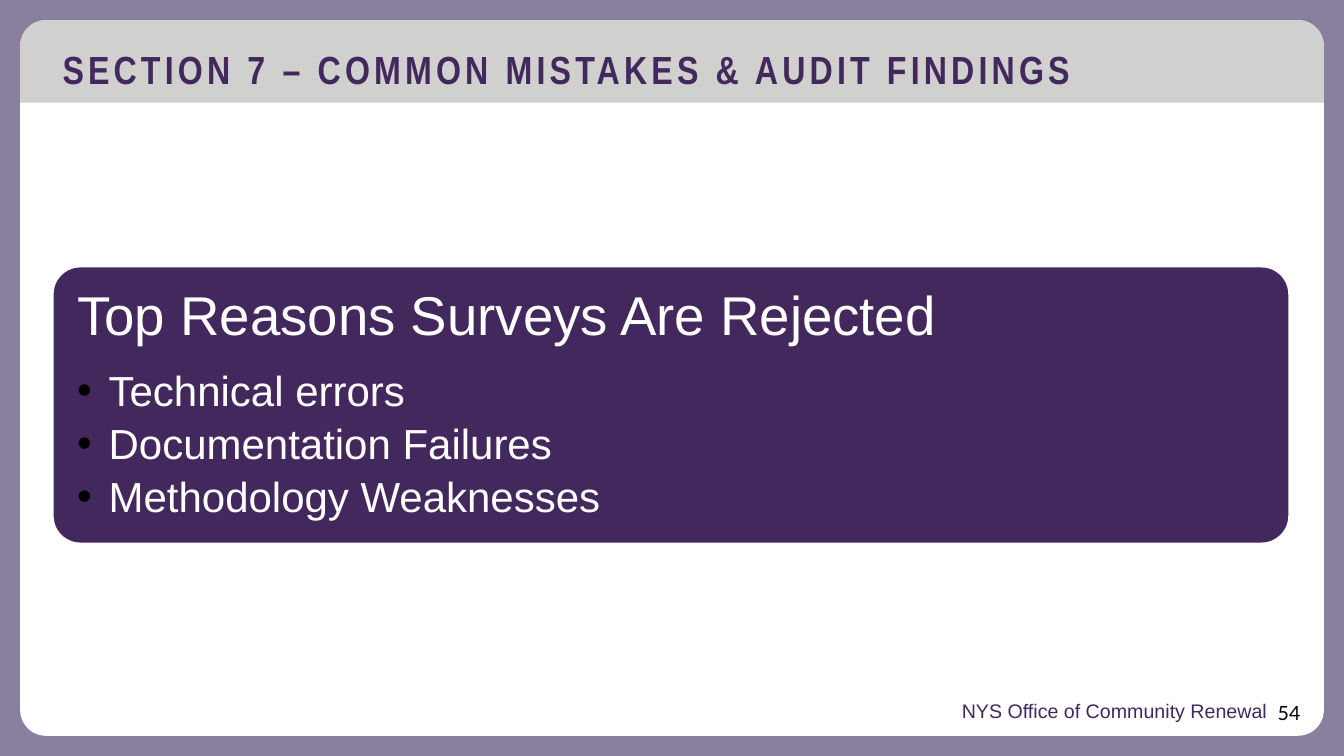
from lxml import etree
from pptx import Presentation
from pptx.dml.color import RGBColor
from pptx.enum.shapes import MSO_SHAPE
from pptx.enum.text import MSO_ANCHOR, PP_ALIGN
from pptx.oxml.ns import qn
from pptx.util import Pt

RECT = MSO_SHAPE.RECTANGLE
ROUNDED = MSO_SHAPE.ROUNDED_RECTANGLE
TOP_ROUNDED = MSO_SHAPE.ROUND_2_SAME_RECTANGLE
TOP, MIDDLE = MSO_ANCHOR.TOP, MSO_ANCHOR.MIDDLE
LEFT, RIGHT = PP_ALIGN.LEFT, PP_ALIGN.RIGHT

SLIDE_WIDTH, SLIDE_HEIGHT = 960, 540
MARGIN = 14.4
PURPLE, LAVENDER, GREY = "43285D", "8B7FA0", "D0D0CE"
WHITE, BLACK = "FFFFFF", "000000"
REASONS = ["Technical errors", "Documentation Failures", "Methodology Weaknesses"]


def color(hex_string):
    return RGBColor.from_string(hex_string)


def add_panel(slide, preset, box, fill, adjustments=(), outline=None):
    panel = slide.shapes.add_shape(preset, *map(Pt, box))
    panel.shadow.inherit = False
    panel.fill.solid()
    panel.fill.fore_color.rgb = color(fill)
    for index, value in enumerate(adjustments):
        panel.adjustments[index] = value
    if outline:
        panel.line.color.rgb = color(outline)
        panel.line.width = Pt(1.5)
    else:
        panel.line.fill.background()


def add_text(slide, box, lines, anchor=TOP, inset=None):
    """Add a wrapped text box and return its paragraphs."""
    frame = slide.shapes.add_textbox(*map(Pt, box)).text_frame
    frame.word_wrap = True
    frame.vertical_anchor = anchor
    if inset is not None:
        frame.margin_left = frame.margin_right = Pt(inset)
        frame.margin_top = frame.margin_bottom = Pt(inset)
    frame.text = "\n".join(lines)
    return frame.paragraphs


def style(paragraph, size, hex_color, font="Arial", bold=False, align=LEFT):
    paragraph.alignment = align
    for run in paragraph.runs:
        run.font.name = font
        run.font.size = Pt(size)
        run.font.bold = bold
        run.font.color.rgb = color(hex_color)


def add_bullet(paragraph, indent, hex_color):
    properties = paragraph._p.get_or_add_pPr()
    properties.set("marL", str(Pt(indent)))
    properties.set("indent", str(-Pt(indent)))
    bullet_color = etree.SubElement(properties, qn("a:buClr"))
    etree.SubElement(bullet_color, qn("a:srgbClr")).set("val", hex_color)
    etree.SubElement(properties, qn("a:buFont")).set("typeface", "Arial")
    etree.SubElement(properties, qn("a:buChar")).set("char", "•")


def draw_frame(slide, width, height):
    inner_width, inner_height = width - 2 * MARGIN, height - 2 * MARGIN
    add_panel(slide, RECT, (0, 0, width, height), LAVENDER)
    add_panel(slide, ROUNDED, (MARGIN, MARGIN, inner_width, inner_height), WHITE, [0.036])
    add_panel(slide, TOP_ROUNDED, (MARGIN, MARGIN, inner_width, 59), GREY, [0.315, 0])


def draw_heading(slide, box, text):
    heading = add_text(slide, box, [text])[0]
    heading.line_spacing = 0.9
    style(heading, 28, PURPLE, "Arial Narrow", bold=True)
    heading.runs[0].font._element.set("spc", "300")


def draw_footer(slide, left, top, width, office, number):
    number_width, overlap = 55.4, 31.7
    page = add_text(slide, (left + width - number_width, top + 1.4, number_width, 24),
                    [number], MIDDLE)[0]
    style(page, 14, BLACK, "Lato", align=RIGHT)
    owner = add_text(slide, (left, top, width - number_width + overlap, 24.5), [office])[0]
    style(owner, 14, PURPLE, align=RIGHT)


def draw_reasons_card(slide, box, title, reasons):
    left, top, width, height = box
    pad = 5.8
    add_panel(slide, ROUNDED, box, PURPLE, [0.1], WHITE)
    text_box = (left + pad, top + pad, width - 2 * pad, height - 2 * pad)
    heading, *items = add_text(slide, text_box, [title, *reasons], MIDDLE, inset=11.7)
    heading.line_spacing = 0.9
    heading.space_after = Pt(16)
    style(heading, 39, WHITE)
    for item in items:
        item.level = 1
        item.line_spacing = 0.9
        item.space_after = Pt(5.5)
        add_bullet(item, 22.5, BLACK)
        style(item, 30, WHITE)


def main():
    presentation = Presentation()
    presentation.slide_width = Pt(SLIDE_WIDTH)
    presentation.slide_height = Pt(SLIDE_HEIGHT)
    slide = presentation.slides.add_slide(presentation.slide_layouts[6])
    draw_frame(slide, SLIDE_WIDTH, SLIDE_HEIGHT)
    draw_footer(slide, 38, 496, 898, "NYS Office of Community Renewal", "54")
    draw_heading(slide, (37.6, 32.4, 883.4, 44.6),
                 "SECTION 7 – COMMON MISTAKES & AUDIT FINDINGS")
    draw_reasons_card(slide, (37.6, 190.3, 883.4, 198),
                      "Top Reasons Surveys Are Rejected", REASONS)
    presentation.save("out.pptx")


if __name__ == "__main__":
    main()
